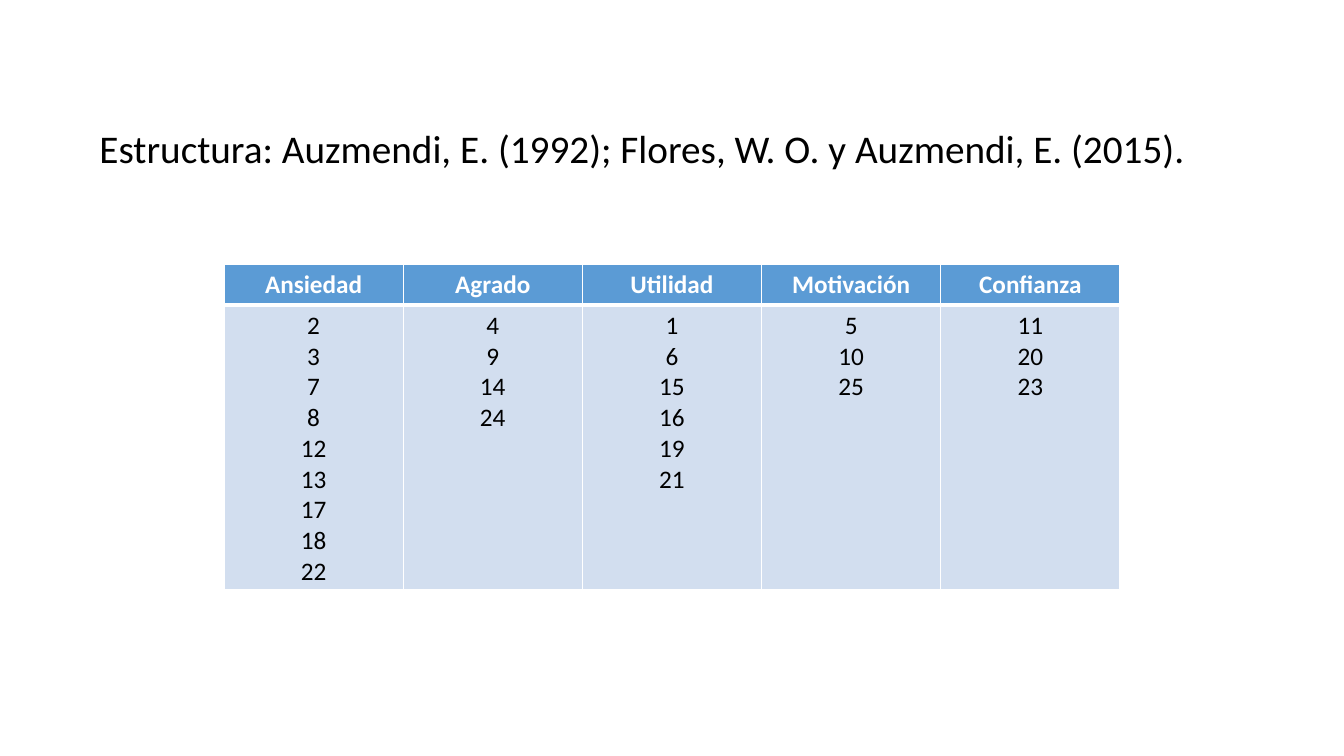
"""Build a slide with a table of questionnaire items by attitude factor."""
from dataclasses import dataclass

from lxml.etree import SubElement
from pptx import Presentation
from pptx.dml.color import RGBColor
from pptx.enum.text import MSO_ANCHOR as Anchor, PP_ALIGN as Align
from pptx.oxml.ns import qn
from pptx.slide import Slide
from pptx.table import _Cell as Cell
from pptx.text.text import TextFrame
from pptx.util import Emu, Inches, Pt


@dataclass(frozen=True)
class Theme:
    font: str = "Calibri"
    title_size: int = 28
    table_size: int = 18
    ink: str = "000000"
    white: str = "FFFFFF"
    header_fill: str = "5B9BD5"
    body_fill: str = "D2DEEF"
    thin_border: int = 1
    thick_border: int = 3


@dataclass(frozen=True)
class Area:
    """Left, top, width and height as shares of the slide's size."""
    left: float
    top: float
    width: float
    height: float

    def lengths(self) -> tuple[Emu, Emu, Emu, Emu]:
        return (Emu(int(self.left * SLIDE_WIDTH)), Emu(int(self.top * SLIDE_HEIGHT)),
                Emu(int(self.width * SLIDE_WIDTH)), Emu(int(self.height * SLIDE_HEIGHT)))


@dataclass(frozen=True)
class Factor:
    name: str
    items: tuple[int, ...]


@dataclass(frozen=True)
class CellStyle:
    fill: str
    color: str
    bold: bool
    top_border: int
    bottom_border: int


THEME = Theme()
SLIDE_WIDTH, SLIDE_HEIGHT = Inches(13.33), Inches(7.5)
TITLE = "Estructura: Auzmendi, E. (1992); Flores, W. O. y Auzmendi, E. (2015)."
TITLE_AREA = Area(1 / 15, 2 / 15, 0.86, 2 / 15)
TABLE_AREA = Area(1 / 6, 0.35, 2 / 3, 0.43)
HEADER_SHARE = 1 / 8
FACTORS = (
    Factor("Ansiedad", (2, 3, 7, 8, 12, 13, 17, 18, 22)),
    Factor("Agrado", (4, 9, 14, 24)),
    Factor("Utilidad", (1, 6, 15, 16, 19, 21)),
    Factor("Motivación", (5, 10, 25)),
    Factor("Confianza", (11, 20, 23)),
)
HEADER = CellStyle(THEME.header_fill, THEME.white, True, THEME.thin_border, THEME.thick_border)
BODY = CellStyle(THEME.body_fill, THEME.ink, False, THEME.thick_border, THEME.thin_border)


def format_text(text_frame: TextFrame, size: int, color: str, bold: bool, align: Align) -> None:
    for paragraph in text_frame.paragraphs:
        paragraph.alignment = align
        for run in paragraph.runs:
            run.font.name = THEME.font
            run.font.size = Pt(size)
            run.font.bold = bold
            run.font.color.rgb = RGBColor.from_string(color)


def add_title(slide: Slide) -> None:
    text_frame = slide.shapes.add_textbox(*TITLE_AREA.lengths()).text_frame
    text_frame.word_wrap = True
    text_frame.vertical_anchor = Anchor.MIDDLE
    text_frame.text = TITLE
    text_frame.paragraphs[0].line_spacing = 0.9
    format_text(text_frame, THEME.title_size, THEME.ink, False, Align.LEFT)


def add_borders(cell: Cell, style: CellStyle) -> None:
    properties = cell._tc.get_or_add_tcPr()
    widths = {"a:lnL": THEME.thin_border, "a:lnR": THEME.thin_border,
              "a:lnT": style.top_border, "a:lnB": style.bottom_border}
    for side, width in widths.items():
        line = SubElement(properties, qn(side), w=str(Pt(width)))
        SubElement(SubElement(line, qn("a:solidFill")), qn("a:srgbClr"), val=THEME.white)


def fill_cell(cell: Cell, text: str, style: CellStyle) -> None:
    cell.text = text
    format_text(cell.text_frame, THEME.table_size, style.color, style.bold, Align.CENTER)
    add_borders(cell, style)
    cell.fill.solid()
    cell.fill.fore_color.rgb = RGBColor.from_string(style.fill)


def add_factor_table(slide: Slide) -> None:
    area = TABLE_AREA.lengths()
    table = slide.shapes.add_table(2, len(FACTORS), *area).table
    table.rows[0].height = Emu(int(area[3] * HEADER_SHARE))
    table.rows[1].height = Emu(area[3] - table.rows[0].height)
    for column, factor in enumerate(FACTORS):
        fill_cell(table.cell(0, column), factor.name, HEADER)
        fill_cell(table.cell(1, column), "\n".join(map(str, factor.items)), BODY)


def main() -> None:
    presentation = Presentation()
    presentation.slide_width, presentation.slide_height = SLIDE_WIDTH, SLIDE_HEIGHT
    slide = presentation.slides.add_slide(presentation.slide_layouts[6])
    add_title(slide)
    add_factor_table(slide)
    presentation.save("out.pptx")


if __name__ == "__main__":
    main()
